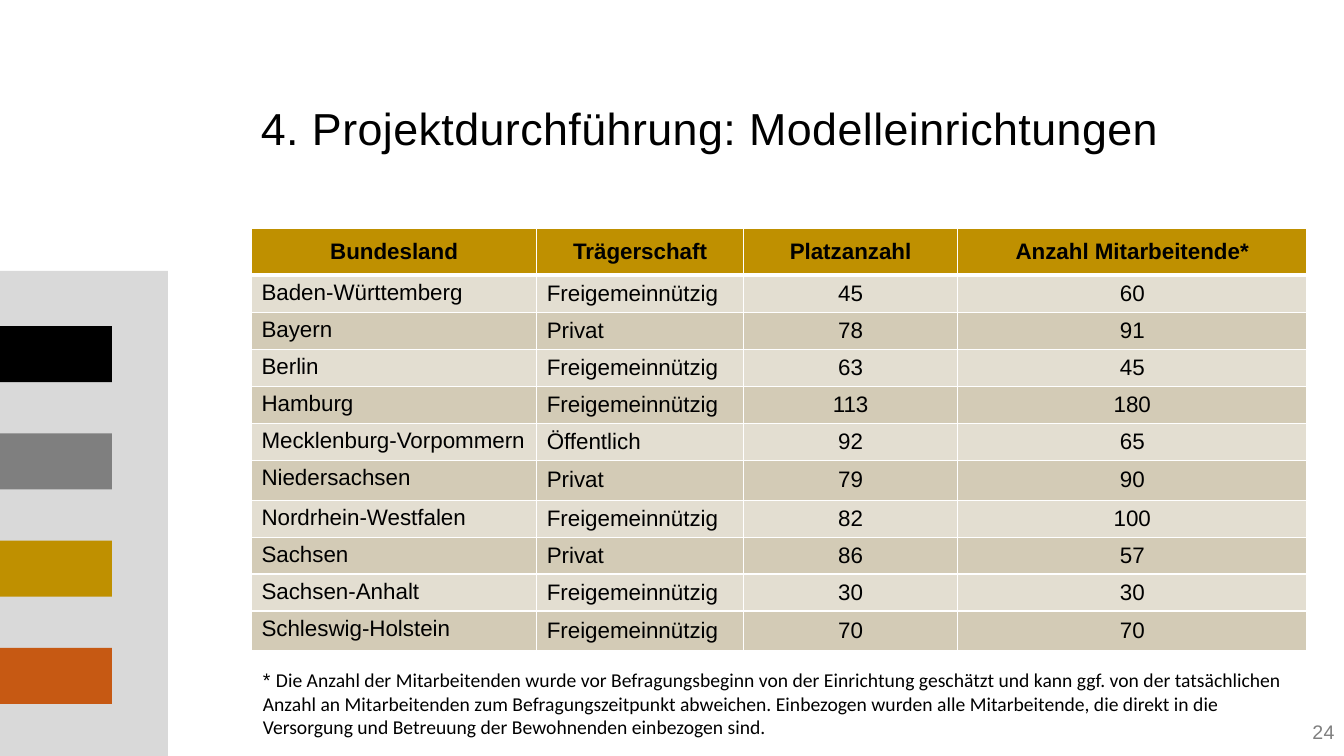
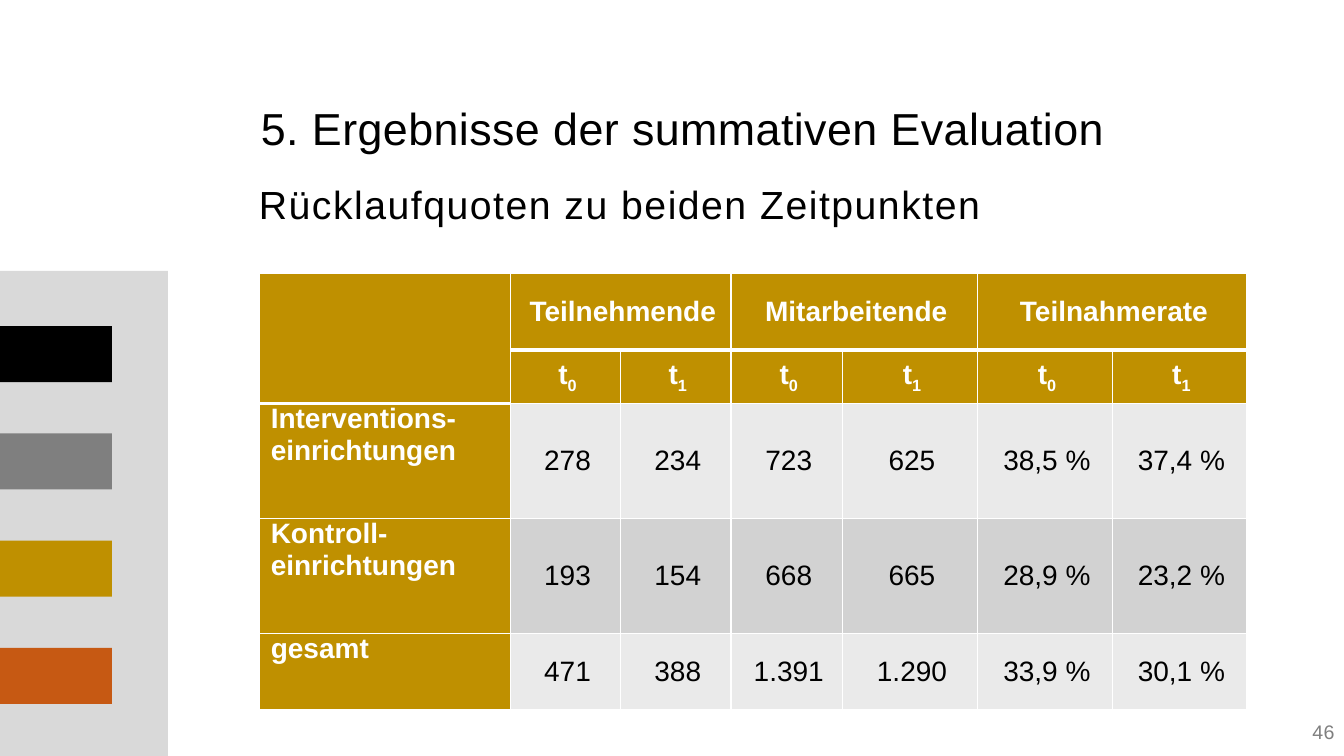
from lxml import etree
from pptx import Presentation
from pptx.dml.color import RGBColor
from pptx.enum import shapes, text
from pptx.oxml import ns
from pptx.util import Pt

BLACK = RGBColor(0x00, 0x00, 0x00)
WHITE = RGBColor(0xFF, 0xFF, 0xFF)
GREY = RGBColor(0x7F, 0x7F, 0x7F)
PANEL = RGBColor(0xD9, 0xD9, 0xD9)
GOLD = RGBColor(0xBF, 0x90, 0x00)
ORANGE = RGBColor(0xC6, 0x59, 0x13)
SAND_BANDS = (RGBColor(0xE3, 0xDE, 0xD1), RGBColor(0xD3, 0xCB, 0xB6))
GREY_BANDS = (RGBColor(0xEA, 0xEA, 0xEA), RGBColor(0xD2, 0xD2, 0xD2))

LEFT, CENTER, RIGHT = text.PP_ALIGN.LEFT, text.PP_ALIGN.CENTER, text.PP_ALIGN.RIGHT
TOP, MIDDLE = text.MSO_ANCHOR.TOP, text.MSO_ANCHOR.MIDDLE
HEADING_LINE = 3
CELL_LINE = 1

FACILITIES = (
    ("Bundesland", "Trägerschaft", "Platzanzahl", "Anzahl Mitarbeitende*"),
    ("Baden-Württemberg", "Freigemeinnützig", "45", "60"),
    ("Bayern", "Privat", "78", "91"),
    ("Berlin", "Freigemeinnützig", "63", "45"),
    ("Hamburg", "Freigemeinnützig", "113", "180"),
    ("Mecklenburg-Vorpommern", "Öffentlich", "92", "65"),
    ("Niedersachsen", "Privat", "79", "90"),
    ("Nordrhein-Westfalen", "Freigemeinnützig", "82", "100"),
    ("Sachsen", "Privat", "86", "57"),
    ("Sachsen-Anhalt", "Freigemeinnützig", "30", "30"),
    ("Schleswig-Holstein", "Freigemeinnützig", "70", "70"),
)
FOOTNOTE = (
    "Die Anzahl der Mitarbeitenden wurde vor Befragungsbeginn von der Einrichtung "
    "geschätzt und kann ggf. von der tatsächlichen Anzahl an Mitarbeitenden zum "
    "Befragungszeitpunkt abweichen. Einbezogen wurden alle Mitarbeitende, die direkt "
    "in die Versorgung und Betreuung der Bewohnenden einbezogen sind."
)
MEASURES = ("Teilnehmende", "Mitarbeitende", "Teilnahmerate")
RESPONSES = (
    ("Interventions-einrichtungen", "278", "234", "723", "625", "38,5 %", "37,4 %"),
    ("Kontroll-einrichtungen", "193", "154", "668", "665", "28,9 %", "23,2 %"),
    ("gesamt", "471", "388", "1.391", "1.290", "33,9 %", "30,1 %"),
)


def style_paragraph(paragraph, size, color=BLACK, bold=False, align=LEFT, spacing=0, face="Arial"):
    """Set alignment, font and letter spacing of a whole paragraph."""
    paragraph.alignment = align
    font = paragraph.font
    font.name, font.size, font.bold = face, Pt(size), bold
    font.color.rgb = color
    if spacing:
        paragraph._p.pPr.get_or_add_defRPr().set("spc", str(round(spacing * 100)))


def add_text_box(slide, box, inset=True, anchor=TOP):
    """Add a wrapping text box and return its first paragraph."""
    frame = slide.shapes.add_textbox(*map(Pt, box)).text_frame
    frame.word_wrap = True
    frame.vertical_anchor = anchor
    if not inset:
        frame.margin_left = frame.margin_right = frame.margin_top = frame.margin_bottom = 0
    return frame.paragraphs[0]


def add_block(slide, box, color):
    """Add a plain filled rectangle without outline."""
    block = slide.shapes.add_shape(shapes.MSO_SHAPE.RECTANGLE, *map(Pt, box))
    block.shadow.inherit = False
    block.fill.solid()
    block.fill.fore_color.rgb = color
    block.line.fill.background()


def add_side_panel(slide, box):
    """Place the grey panel with its four colour bars."""
    left, top, width, height = box
    add_block(slide, box, PANEL)
    for index, color in enumerate((BLACK, GREY, GOLD, ORANGE)):
        add_block(slide, (left, top + 39.5 + 76.6 * index, width * 2 / 3, 40), color)


def add_base_slide(deck, title, number):
    """Add a slide with side panel, title and page number."""
    slide = deck.slides.add_slide(deck.slide_layouts[6])
    add_side_panel(slide, (0, 193.5, 120, 346.5))
    heading = add_text_box(slide, (179.3, 66.2, 737, 50.4), anchor=MIDDLE)
    heading.text = title
    style_paragraph(heading, 32, spacing=0.3)
    page = add_text_box(slide, (880, 519, 73.3, 15), inset=False)
    page.text = number
    page.line_spacing = Pt(12)
    style_paragraph(page, 14, GREY, align=RIGHT, spacing=0.2)
    return slide


def add_grid(slide, left, top, widths, heights):
    """Add an unbanded table with the given column widths and row heights."""
    box = map(Pt, (left, top, sum(widths), sum(heights)))
    table = slide.shapes.add_table(len(heights), len(widths), *box).table
    table.horz_banding = False
    for column, width in zip(table.columns, widths):
        column.width = Pt(width)
    for row, height in zip(table.rows, heights):
        row.height = Pt(height)
    return table


def style_cell(cell, fill, top=CELL_LINE, bottom=CELL_LINE, anchor=MIDDLE):
    """Give a cell white borders, a fill and an anchor."""
    properties = cell._tc.get_or_add_tcPr()
    for side, width in zip("LRTB", (CELL_LINE, CELL_LINE, top, bottom)):
        line = etree.SubElement(properties, ns.qn(f"a:ln{side}"), w=str(Pt(width)))
        solid = etree.SubElement(line, ns.qn("a:solidFill"))
        etree.SubElement(solid, ns.qn("a:srgbClr"), val=str(WHITE))
    cell.fill.solid()
    cell.fill.fore_color.rgb = fill
    cell.vertical_anchor = anchor


def add_facility_table(slide, left, top):
    """Place the table of model facilities."""
    heights = [33.8] + [25] * 4 + [26.6, 28.4] + [25] * 3 + [28.4]
    table = add_grid(slide, left, top, (203.8, 147.6, 153.2, 249.2), heights)
    for r, row in enumerate(FACILITIES):
        for c, entry in enumerate(row):
            cell = table.cell(r, c)
            header = r == 0
            style_cell(
                cell,
                GOLD if header else SAND_BANDS[(r - 1) % 2],
                top=HEADING_LINE if r == 1 else CELL_LINE,
                bottom=HEADING_LINE if header else CELL_LINE,
                anchor=TOP if c == 0 and not header else MIDDLE,
            )
            cell.text = entry
            align = CENTER if header or c > 1 else LEFT
            style_paragraph(cell.text_frame.paragraphs[0], 16, bold=header, align=align)


def add_footnote(slide, box):
    """Place the note below the facility table."""
    note = add_text_box(slide, box)
    star = note.add_run()
    star.text = "* "
    star.font.name = "Arial"
    note.add_run().text = FOOTNOTE
    style_paragraph(note, 14, face="Calibri")


def add_response_table(slide, left, top):
    """Place the table of response rates with its two header rows."""
    widths = (179.2, 78.6, 79, 79.6, 96.4, 96.4, 95.8)
    table = add_grid(slide, left, top, widths, (54.6, 38.2, 82.2, 82.2, 54.6))
    groups = [""] + [entry for name in MEASURES for entry in (name, "")]
    times = [""] + ["t0", "t1"] * len(MEASURES)
    for r, row in enumerate((groups, times, *RESPONSES)):
        for c, entry in enumerate(row):
            cell = table.cell(r, c)
            heading = r < 2 or c == 0
            label_row = 1 if c == 0 else 0
            style_cell(
                cell,
                GOLD if heading else GREY_BANDS[r % 2],
                top=HEADING_LINE if r == label_row + 1 else CELL_LINE,
                bottom=HEADING_LINE if r <= label_row else CELL_LINE,
                anchor=TOP if c == 0 else MIDDLE,
            )
            cell.margin_left, cell.margin_right = Pt(8), Pt(5)
            cell.margin_top = cell.margin_bottom = 0
            paragraph = cell.text_frame.paragraphs[0]
            paragraph.space_after = Pt(2)
            style_paragraph(
                paragraph, 20, WHITE if heading else BLACK, heading, CENTER if c else LEFT
            )
            if r == 1 and entry:
                paragraph.add_run().text = entry[0]
                subscript = paragraph.add_run()
                subscript.text = entry[1]
                subscript.font._element.set("baseline", "-25000") if hasattr(
                    subscript.font, "_element"
                ) else subscript._r.get_or_add_rPr().set("baseline", "-25000")
            elif entry:
                paragraph.add_run().text = entry
    table.cell(0, 0).merge(table.cell(1, 0))
    for c in range(1, len(widths), 2):
        table.cell(0, c).merge(table.cell(0, c + 1))


def build_facilities(deck):
    """Build the slide on the model facilities."""
    slide = add_base_slide(deck, "4. Projektdurchführung: Modelleinrichtungen", "24")
    add_facility_table(slide, 179.6, 162.8)
    add_footnote(slide, (180.7, 473.8, 753.8, 58.3))


def build_responses(deck):
    """Build the slide on the response rates."""
    slide = add_base_slide(deck, "5. Ergebnisse der summativen Evaluation", "46")
    subtitle = add_text_box(slide, (185, 132.5, 745, 46.8), inset=False)
    subtitle.text = "Rücklaufquoten zu beiden Zeitpunkten"
    subtitle.line_spacing = 0.9
    style_paragraph(subtitle, 28, spacing=1.1)
    add_response_table(slide, 185.4, 195.4)


def main():
    """Build and save the deck."""
    deck = Presentation()
    deck.slide_width, deck.slide_height = Pt(960), Pt(540)
    build_facilities(deck)
    build_responses(deck)
    deck.save("out.pptx")


if __name__ == "__main__":
    main()
